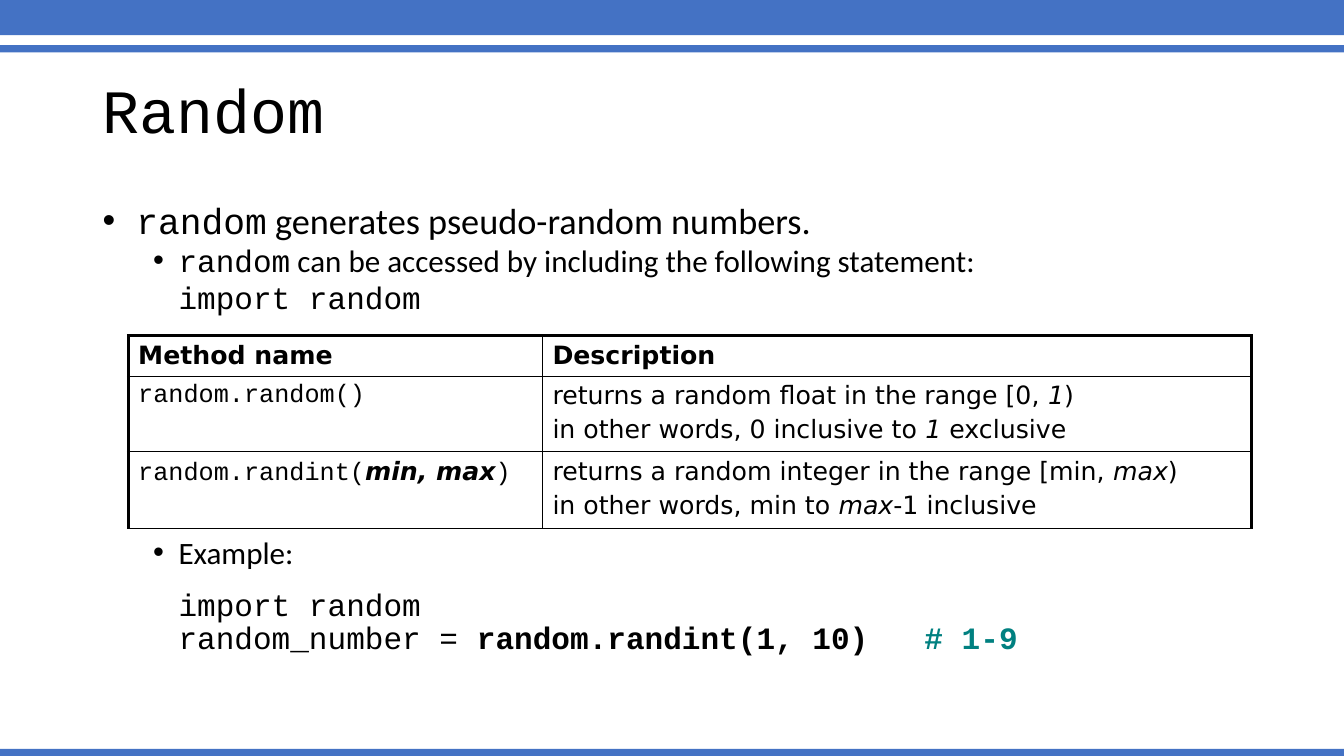
"""Build a slide that explains the random module with a method table and an example."""
from dataclasses import dataclass

from lxml import etree
from pptx import Presentation
from pptx.dml.color import RGBColor
from pptx.enum.shapes import MSO_SHAPE
from pptx.enum.text import MSO_ANCHOR, PP_ALIGN
from pptx.oxml.ns import qn
from pptx.util import Cm, Pt

RECTANGLE = MSO_SHAPE.RECTANGLE
MIDDLE = MSO_ANCHOR.MIDDLE
LEFT = PP_ALIGN.LEFT
TITLE_ONLY = 5


@dataclass(frozen=True)
class Theme:
    bar: str = "4472C4"
    text: str = "000000"
    comment: str = "008080"
    body_font: str = "Calibri"
    code_font: str = "Courier New"
    table_font: str = "DejaVu Sans"
    title_size: float = 44
    lead_size: float = 25.9
    detail_size: float = 22.2
    table_size: float = 18
    thin_line: float = 1
    thick_line: float = 2.25


THEME = Theme()


@dataclass(frozen=True)
class Bar:
    top: float
    height: float


@dataclass(frozen=True)
class Span:
    text: str
    font: str
    bold: bool = False
    italic: bool = False
    color: str = THEME.text


@dataclass(frozen=True)
class Line:
    spans: list[Span]
    size: float = THEME.detail_size
    margin: float = 1.91
    spacing: float = 0.8
    before: float = 5
    bullet: bool = False


def body(text: str) -> Span:
    return Span(text, THEME.body_font)


def code(text: str, bold: bool = False, color: str = THEME.text) -> Span:
    return Span(text, THEME.code_font, bold, color=color)


def cell_text(text: str, bold: bool = False, italic: bool = False) -> Span:
    return Span(text, THEME.table_font, bold, italic)


BARS = [Bar(0, 0.89), Bar(1.14, 0.18), Bar(18.87, 0.18)]

LINES = [
    Line([body(" "), code("random"), body(" generates pseudo-random numbers.")],
         size=THEME.lead_size, margin=0.64, before=10, bullet=True),
    Line([code("random"), body(" can be accessed by including the following statement:")],
         bullet=True),
    Line([code("import random")]),
    Line([body("Example:")], before=161, bullet=True),
    Line([code("import random")], spacing=0.7, before=18),
    Line([code("random_number = "), code("random.randint(1, 10)   ", bold=True),
          code("# 1-9", bold=True, color=THEME.comment)], spacing=0.7),
]

COLUMN_WIDTHS = [10.44, 17.86]
ROW_HEIGHTS = [1.02, 1.86, 1.93]
ROWS = [
    [[[cell_text("Method name", bold=True)]], [[cell_text("Description", bold=True)]]],
    [
        [[code("random.random()")]],
        [[cell_text("returns a random float in the range [0, "),
          cell_text("1", italic=True), cell_text(")")],
         [cell_text("in other words, 0 inclusive to "),
          cell_text("1 ", italic=True), cell_text("exclusive")]],
    ],
    [
        [[code("random.randint("), cell_text("min, max", bold=True, italic=True), code(")")]],
        [[cell_text("returns a random integer in the range [min, "),
          cell_text("max", italic=True), cell_text(")")],
         [cell_text("in other words, min to "),
          cell_text("max", italic=True), cell_text("-1 inclusive")]],
    ],
]


def add_spans(paragraph, spans: list[Span], size: float) -> None:
    for span in spans:
        run = paragraph.add_run()
        run.text = span.text
        run.font.name = span.font
        run.font.size = Pt(size)
        run.font.bold = span.bold
        run.font.italic = span.italic
        run.font.color.rgb = RGBColor.from_string(span.color)


def paragraph_at(text_frame, index: int):
    return text_frame.add_paragraph() if index else text_frame.paragraphs[0]


def add_bar(slide, bar: Bar, width: int) -> None:
    shape = slide.shapes.add_shape(RECTANGLE, 0, Cm(bar.top), width, Cm(bar.height))
    shape.shadow.inherit = False
    shape.fill.solid()
    shape.fill.fore_color.rgb = RGBColor.from_string(THEME.bar)
    shape.line.fill.background()


def format_title(title, text: str) -> None:
    title.left, title.top, title.width, title.height = Cm(2.34), Cm(1.02), Cm(29.21), Cm(3.68)
    title.text_frame.text = text
    title.text_frame.vertical_anchor = MIDDLE
    paragraph = title.text_frame.paragraphs[0]
    paragraph.alignment = LEFT
    paragraph.line_spacing = 0.9
    font = paragraph.runs[0].font
    font.name = THEME.code_font
    font.size = Pt(THEME.title_size)
    font.color.rgb = RGBColor.from_string(THEME.text)


def add_body(slide, lines: list[Line]) -> None:
    text_frame = slide.shapes.add_textbox(Cm(2.34), Cm(5.08), Cm(29.21), Cm(12.09)).text_frame
    text_frame.word_wrap = True
    for index, line in enumerate(lines):
        paragraph = paragraph_at(text_frame, index)
        paragraph.line_spacing = line.spacing
        paragraph.space_before = Pt(line.before)
        add_spans(paragraph, line.spans, line.size)
        properties = paragraph._p.get_or_add_pPr()
        properties.set("marL", str(Cm(line.margin)))
        if line.bullet:
            properties.set("indent", str(-Cm(0.64)))
            etree.SubElement(properties, qn("a:buFont"), typeface="Arial")
            etree.SubElement(properties, qn("a:buChar"), char="•")


def set_borders(cell, widths: dict[str, float]) -> None:
    properties = cell._tc.get_or_add_tcPr()
    for index, (side, width) in enumerate(widths.items()):
        border = etree.Element(qn(f"a:ln{side}"), w=str(Pt(width)))
        fill = etree.SubElement(border, qn("a:solidFill"))
        etree.SubElement(fill, qn("a:srgbClr"), val=THEME.text)
        properties.insert(index, border)


def add_method_table(slide) -> None:
    table = slide.shapes.add_table(len(ROWS), len(COLUMN_WIDTHS), Cm(3.23), Cm(8.46),
                                   Cm(sum(COLUMN_WIDTHS)), Cm(sum(ROW_HEIGHTS))).table
    table.first_row = table.horz_banding = False
    for column, width in zip(table.columns, COLUMN_WIDTHS):
        column.width = Cm(width)
    for row, height in zip(table.rows, ROW_HEIGHTS):
        row.height = Cm(height)
    thin, thick = THEME.thin_line, THEME.thick_line
    for row_index, row in enumerate(ROWS):
        for column_index, paragraphs in enumerate(row):
            cell = table.cell(row_index, column_index)
            cell.fill.background()
            set_borders(cell, {"L": thin if column_index else thick,
                               "R": thick if column_index else thin,
                               "T": thin if row_index else thick,
                               "B": thin})
            for index, spans in enumerate(paragraphs):
                paragraph = paragraph_at(cell.text_frame, index)
                paragraph.space_before = Pt(3.6)
                add_spans(paragraph, spans, THEME.table_size)


def main() -> None:
    presentation = Presentation()
    presentation.slide_width, presentation.slide_height = Cm(33.87), Cm(19.05)
    slide = presentation.slides.add_slide(presentation.slide_layouts[TITLE_ONLY])
    for bar in BARS:
        add_bar(slide, bar, presentation.slide_width)
    format_title(slide.shapes.title, "Random")
    add_body(slide, LINES)
    add_method_table(slide)
    presentation.save("out.pptx")


if __name__ == "__main__":
    main()
